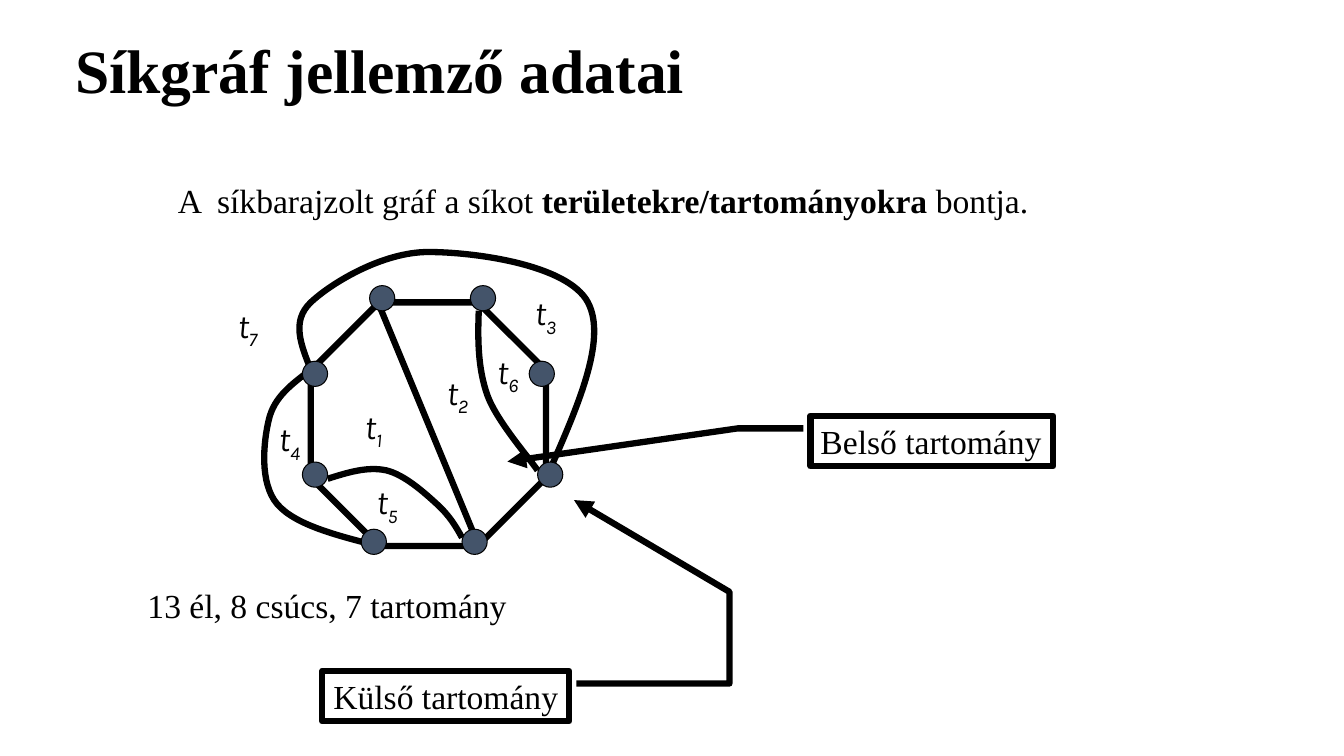
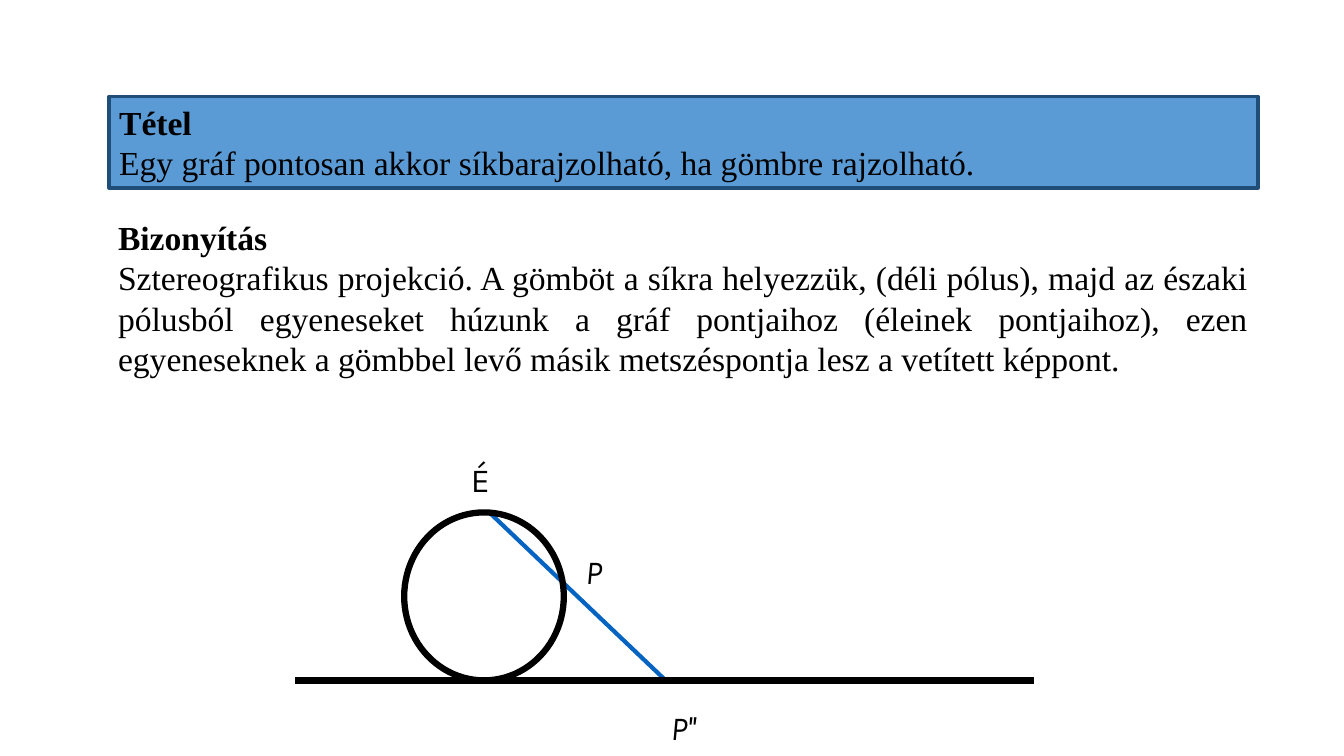
import pptx
import pptx.util
import pptx.dml.color
import pptx.enum.shapes
import pptx.enum.text
import pptx.oxml.ns
import lxml.etree

RGBColor = pptx.dml.color.RGBColor
SHAPE = pptx.enum.shapes.MSO_SHAPE
ALIGN = pptx.enum.text.PP_ALIGN
ANCHOR = pptx.enum.text.MSO_ANCHOR
FIT = pptx.enum.text.MSO_AUTO_SIZE
qn = pptx.oxml.ns.qn

BLACK = RGBColor(0, 0, 0)
NODE = RGBColor(0x44, 0x54, 0x6A)
RAY = RGBColor(0x05, 0x63, 0xC1)
BAND = RGBColor(0x5B, 0x9B, 0xD5)
BAND_EDGE = RGBColor(0x1F, 0x4E, 0x79)
SERIF = "Times New Roman"
LABEL = "Karla"
EMU_PER_PX = 9525
WIDTH, HEIGHT = 1280, 720
THICK = 4.5


class Deck:
    """Holds the shared style and draws on the current slide."""

    def __init__(self):
        self.prs = pptx.Presentation()
        self.prs.slide_width, self.prs.slide_height = self.px(WIDTH, HEIGHT)
        self.slide = None

    def px(self, *lengths):
        return [pptx.util.Emu(length * EMU_PER_PX) for length in lengths]

    def start(self, title=None):
        layout = self.prs.slide_layouts[5 if title else 6]
        self.slide = self.prs.slides.add_slide(layout)
        if title:
            heading = self.slide.shapes.title
            heading.left, heading.top, heading.width, heading.height = self.px(62, 34, 1152, 120)
            self.fill_text(heading, [[(title, "b")]], size=44, anchor=ANCHOR.TOP, fit=FIT.NONE)
            heading.text_frame.paragraphs[0].line_spacing = 0.9

    def fill_text(self, shape, paragraphs, font=SERIF, size=24, align=ALIGN.LEFT,
                  anchor=ANCHOR.MIDDLE, wrap=True, fit=FIT.SHAPE_TO_FIT_TEXT, italic=False):
        frame = shape.text_frame
        frame.word_wrap, frame.auto_size, frame.vertical_anchor = wrap, fit, anchor
        for index, runs in enumerate(paragraphs):
            paragraph = frame.add_paragraph() if index else frame.paragraphs[0]
            paragraph.alignment = align
            paragraph.font.name = font
            paragraph.font.size = pptx.util.Pt(size)
            paragraph.font.color.rgb = BLACK
            paragraph.font.italic = italic
            for words, mark in runs:
                run = paragraph.add_run()
                run.text = words
                if mark == "b":
                    run.font.bold = True
                elif mark == "sub":
                    run._r.get_or_add_rPr().set("baseline", "-25000")

    def text(self, box, paragraphs, **style):
        self.fill_text(self.slide.shapes.add_textbox(*self.px(*box)), paragraphs, **style)

    def label(self, box, letter, index="", italic=True):
        runs = [(letter, "")] + ([(index, "sub")] if index else [])
        self.text(box, [runs], font=LABEL, align=ALIGN.CENTER, wrap=False, italic=italic)

    def dress(self, shape, fill, color, weight):
        shape.shadow.inherit = False
        if fill is None:
            shape.fill.background()
        else:
            shape.fill.solid()
            shape.fill.fore_color.rgb = fill
        shape.line.color.rgb = color
        shape.line.width = pptx.util.Pt(weight)

    def shape(self, preset, box, fill=None, color=BLACK, weight=THICK, adjust=()):
        shape = self.slide.shapes.add_shape(preset, *self.px(*box))
        self.dress(shape, fill, color, weight)
        for index, value in enumerate(adjust):
            shape.adjustments[index] = value
        return shape

    def callout(self, preset, box, words, adjust, align):
        callout = self.shape(preset, box, adjust=adjust)
        self.fill_text(callout, [[(words, "")]], align=align, wrap=False)
        outline = callout._element.spPr.find(qn("a:ln"))
        lxml.etree.SubElement(outline, qn("a:tailEnd"), type="triangle")

    def line(self, start, end, color=BLACK, weight=THICK):
        line = self.slide.shapes.add_connector(
            pptx.enum.shapes.MSO_CONNECTOR.STRAIGHT, *self.px(*start, *end))
        line.line.color.rgb = color
        line.line.width = pptx.util.Pt(weight)
        lxml.etree.SubElement(line._element.spPr, qn("a:effectLst"))

    def curve(self, start, *points):
        builder = self.slide.shapes.build_freeform(*start, scale=EMU_PER_PX)
        builder.add_line_segments(points, close=False)
        curve = builder.convert_to_shape()
        self.dress(curve, None, BLACK, THICK)
        outline = curve._element.find(".//" + qn("a:path"))
        steps = outline.findall(qn("a:lnTo"))
        for first in range(0, len(steps), 3):
            bezier = lxml.etree.SubElement(outline, qn("a:cubicBezTo"))
            for step in steps[first:first + 3]:
                bezier.append(step[0])
                outline.remove(step)


def planar_graph(deck):
    deck.start("Síkgráf jellemző adatai")
    deck.text((160, 167, 960, 48), [[("A  síkbarajzolt gráf a síkot ", ""),
                                     ("területekre/tartományokra ", "b"), ("bontja.", "")]])
    deck.curve((456, 296), (455, 323), (455, 350), (464, 376),
               (473, 401), (504, 436), (512, 448))
    deck.shape(SHAPE.OCTAGON, (296, 288, 224, 232), adjust=[0.29])
    deck.line((360, 288), (456, 520))
    deck.curve((296, 352), (287, 329), (277, 306), (296, 288),
               (315, 270), (364, 240), (408, 240), (452, 240), (541, 252), (560, 288),
               (579, 324), (549, 390), (520, 456))
    deck.curve((296, 352), (278, 366), (261, 378), (256, 400),
               (251, 421), (247, 460), (264, 480), (281, 500), (321, 510), (360, 520))
    deck.curve((312, 456), (331, 450), (350, 444), (368, 448),
               (385, 452), (404, 469), (416, 480), (428, 491), (434, 501), (440, 512))
    for left, top in [(352, 272), (448, 272), (504, 344), (512, 440),
                      (440, 504), (288, 344), (288, 440), (344, 504)]:
        deck.shape(SHAPE.OVAL, (left, top, 24, 24), fill=NODE, weight=0.75)
    regions = [(335, 384), (415, 352), (499, 276), (255, 396), (348, 456), (463, 332), (215, 288)]
    for number, (left, top) in enumerate(regions, 1):
        deck.label((left, top, 41, 48), "t", str(number))
    deck.text((131, 552, 365, 48), [[("13 él, 8 csúcs, 7 tartomány", "")]], wrap=False)
    deck.callout(SHAPE.LINE_CALLOUT_3, (307, 639, 235, 48), "Külső tartomány",
                 [0.25, 1.03, 0.25, 1.65, -1.57, 1.65, -3.39, 1.02], ALIGN.CENTER)
    deck.callout(SHAPE.LINE_CALLOUT_2, (772, 396, 231, 48), "Belső tartomány",
                 [0.25, -0.03, 0.25, -0.3, 0.91, -1.25], ALIGN.LEFT)


def sphere_theorem(deck):
    deck.start()
    proof = ("Sztereografikus projekció. A gömböt a síkra helyezzük, (déli pólus), majd az "
             "északi pólusból egyeneseket húzunk a gráf pontjaihoz (éleinek pontjaihoz), ezen "
             "egyeneseknek a gömbbel levő másik metszéspontja lesz a vetített képpont.")
    deck.text((103, 202, 1095, 165), [[("Bizonyítás", "b")], [(proof, "")]],
              align=ALIGN.JUSTIFY, anchor=ANCHOR.TOP)
    deck.line((466, 488), (634, 648), color=RAY, weight=3)
    deck.shape(SHAPE.OVAL, (385, 488, 152, 160))
    deck.line((281, 648), (985, 648))
    deck.label((547, 520, 37, 48), "P")
    deck.label((625, 668, 51, 48), "P''")
    deck.label((439, 432, 37, 48), "É", italic=False)
    theorem = deck.shape(SHAPE.RECTANGLE, (104, 92, 1094, 87), BAND, BAND_EDGE, 2.75)
    deck.fill_text(theorem, [[("Tétel", "b")],
                             [("Egy gráf pontosan akkor síkbarajzolható, ha gömbre rajzolható.", "")]])


def main():
    deck = Deck()
    planar_graph(deck)
    sphere_theorem(deck)
    deck.prs.save("out.pptx")


if __name__ == "__main__":
    main()
